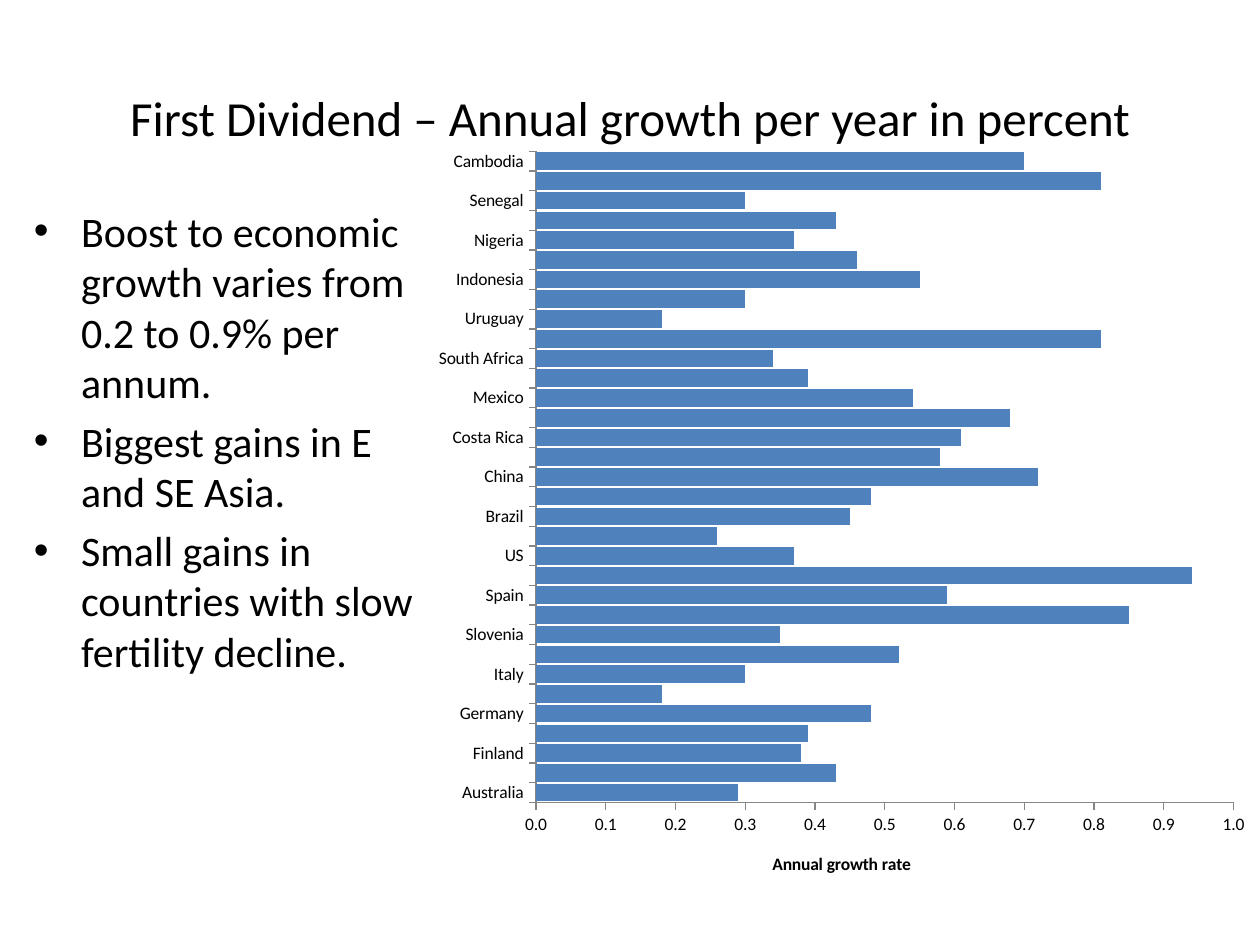
from typing import Any, NamedTuple

from lxml import etree
from pptx import Presentation
from pptx.chart.data import CategoryChartData
from pptx.dml.color import RGBColor
from pptx.enum import chart as ch, text as tx
from pptx.oxml import parse_xml
from pptx.oxml.ns import nsdecls, qn
from pptx.util import Pt

FONT = "Calibri"
BLACK, BAR_BLUE, AXIS_GREY = "000000", "4F81BD", "868686"


class Box(NamedTuple):
    left: float
    top: float
    width: float
    height: float

    def lengths(self) -> list[Pt]:
        return [Pt(value) for value in self]


class Growth(NamedTuple):
    country: str
    rate: float


TITLE_BOX = Box(36, 21.6, 648, 90)
POINTS_BOX = Box(12.24, 113.76, 234, 329.76)
CHART_BOX = Box(239.04, 77.76, 480.24, 437.76)
PLOT_SHARE = {"x": 0.14, "y": 0.02, "w": 0.83, "h": 0.85}
BULLET_INDENT = 27

TITLE = "First Dividend – Annual growth per year in percent"
POINTS = [
    "Boost to economic growth varies from 0.2 to 0.9% per annum.",
    "Biggest gains in E and SE Asia.",
    "Small gains in countries with slow fertility decline.",
]
GROWTH = [
    Growth("Australia", 0.29), Growth("Austria", 0.43), Growth("Finland", 0.38),
    Growth("France", 0.39), Growth("Germany", 0.48), Growth("Hungary", 0.18),
    Growth("Italy", 0.3), Growth("Japan", 0.52), Growth("Slovenia", 0.35),
    Growth("South Korea", 0.85), Growth("Spain", 0.59), Growth("Taiwan", 0.94),
    Growth("US", 0.37), Growth("Argentina", 0.26), Growth("Brazil", 0.45),
    Growth("Chile", 0.48), Growth("China", 0.72), Growth("Colombia", 0.58),
    Growth("Costa Rica", 0.61), Growth("Jamaica", 0.68), Growth("Mexico", 0.54),
    Growth("Peru", 0.39), Growth("South Africa", 0.34), Growth("Thailand", 0.81),
    Growth("Uruguay", 0.18), Growth("India", 0.3), Growth("Indonesia", 0.55),
    Growth("Kenya", 0.46), Growth("Nigeria", 0.37), Growth("Philippines", 0.43),
    Growth("Senegal", 0.3), Growth("Vietnam", 0.81), Growth("Cambodia", 0.7),
]


def rgb(hex_value: str) -> RGBColor:
    return RGBColor.from_string(hex_value)


def apply(target: Any, formats: dict[str, Any]) -> None:
    for name, value in formats.items():
        setattr(target, name, value)


def style_font(font: Any, size: float, bold: bool = False) -> None:
    apply(font, {"name": FONT, "size": Pt(size), "bold": bold})
    font.color.rgb = rgb(BLACK)


def add_text(slide: Any, box: Box, lines: list[str], size: float,
             frame_formats: dict[str, Any], line_formats: dict[str, Any]) -> Any:
    frame = slide.shapes.add_textbox(*box.lengths()).text_frame
    apply(frame, {"word_wrap": True, **frame_formats})
    frame.text = "\n".join(lines)
    for paragraph in frame.paragraphs:
        apply(paragraph, line_formats)
        style_font(paragraph.runs[0].font, size)
    return frame


def add_bullet(paragraph: Any) -> None:
    properties = paragraph._p.get_or_add_pPr()
    properties.set("marL", str(Pt(BULLET_INDENT)))
    properties.set("indent", str(-Pt(BULLET_INDENT)))
    etree.SubElement(properties, qn("a:buFont")).set("typeface", "Arial")
    etree.SubElement(properties, qn("a:buChar")).set("char", "•")


def place_plot(chart: Any) -> None:
    """Fix the inner plot area as shares of the chart's size."""
    edges = "".join(f'<c:{side}Mode val="edge"/>' for side in "xy")
    shares = "".join(f'<c:{side} val="{share}"/>' for side, share in PLOT_SHARE.items())
    layout = parse_xml(
        f'<c:layout {nsdecls("c")}><c:manualLayout><c:layoutTarget val="inner"/>'
        f"{edges}{shares}</c:manualLayout></c:layout>")
    plot_area = chart._chartSpace.chart.plotArea
    for automatic in plot_area.findall(qn("c:layout")):
        plot_area.remove(automatic)
    plot_area.insert(0, layout)


def label_every_second(category_axis: Any) -> None:
    skip = parse_xml(f'<c:tickLblSkip {nsdecls("c")} val="2"/>')
    category_axis._element.find(qn("c:noMultiLvlLbl")).addprevious(skip)


def add_growth_chart(slide: Any) -> None:
    data = CategoryChartData(number_format="0.0")
    data.categories = [growth.country for growth in GROWTH]
    data.add_series("Series 1", [growth.rate for growth in GROWTH])
    chart = slide.shapes.add_chart(
        ch.XL_CHART_TYPE.BAR_CLUSTERED, *CHART_BOX.lengths(), data).chart
    apply(chart, {"has_legend": False, "has_title": False})
    style_font(chart.font, 10)
    place_plot(chart)

    bars = chart.plots[0]
    apply(bars, {"gap_width": 12, "vary_by_categories": False})
    bars.series[0].format.fill.solid()
    bars.series[0].format.fill.fore_color.rgb = rgb(BAR_BLUE)

    countries, rates = chart.category_axis, chart.value_axis
    for axis in (countries, rates):
        apply(axis, {"has_major_gridlines": False,
                     "major_tick_mark": ch.XL_TICK_MARK.OUTSIDE,
                     "minor_tick_mark": ch.XL_TICK_MARK.NONE})
        axis.format.line.color.rgb = rgb(AXIS_GREY)
        axis.format.line.width = Pt(0.75)
    label_every_second(countries)

    apply(rates, {"minimum_scale": 0, "maximum_scale": 1, "major_unit": 0.1})
    apply(rates.tick_labels, {"number_format": "0.0", "number_format_is_linked": False})
    rate_title = rates.axis_title.text_frame
    rate_title.text = "Annual growth rate"
    style_font(rate_title.paragraphs[0].runs[0].font, 10, bold=True)


def main() -> None:
    deck = Presentation()
    apply(deck, {"slide_width": Pt(720), "slide_height": Pt(540)})
    slide = deck.slides.add_slide(deck.slide_layouts[6])
    add_text(slide, TITLE_BOX, [TITLE], 28,
             {"vertical_anchor": tx.MSO_ANCHOR.MIDDLE},
             {"alignment": tx.PP_ALIGN.CENTER})
    points = add_text(slide, POINTS_BOX, POINTS, 24, {}, {"space_before": Pt(4.8)})
    for point in points.paragraphs:
        add_bullet(point)
    add_growth_chart(slide)
    deck.save("out.pptx")


if __name__ == "__main__":
    main()
